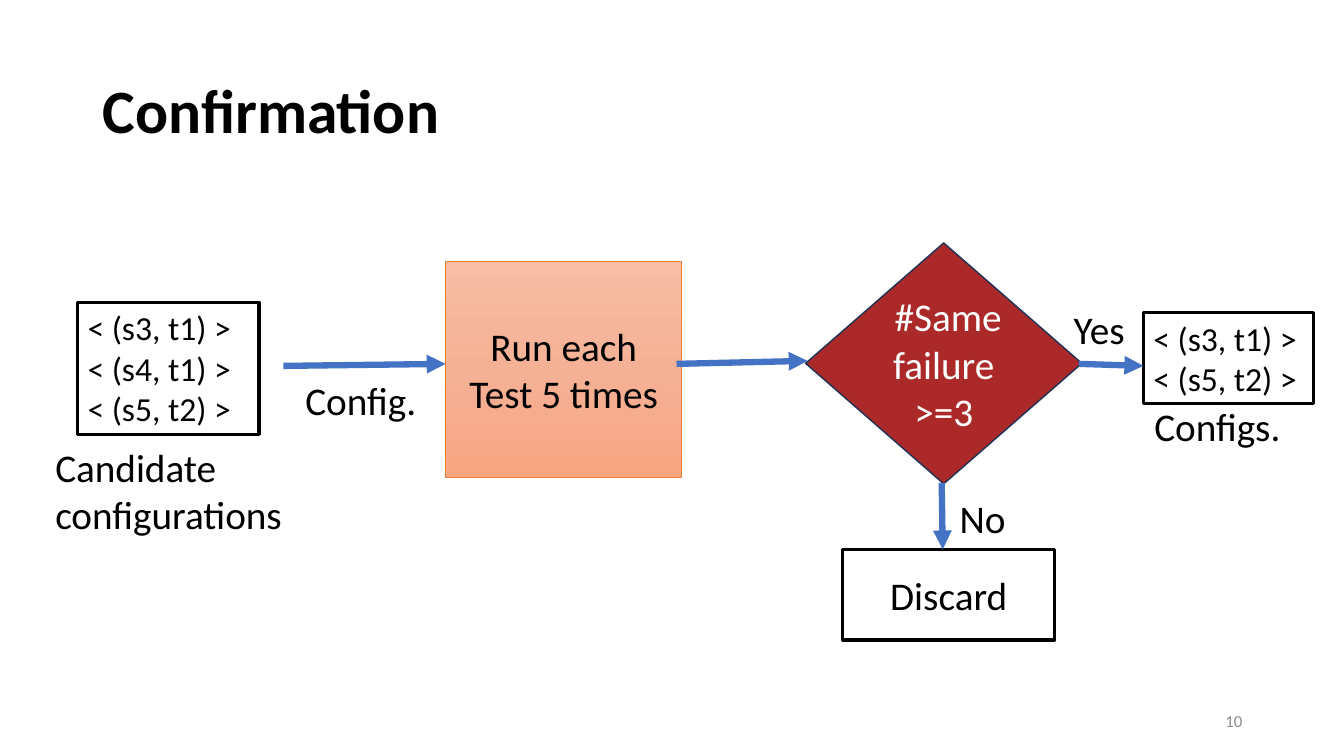
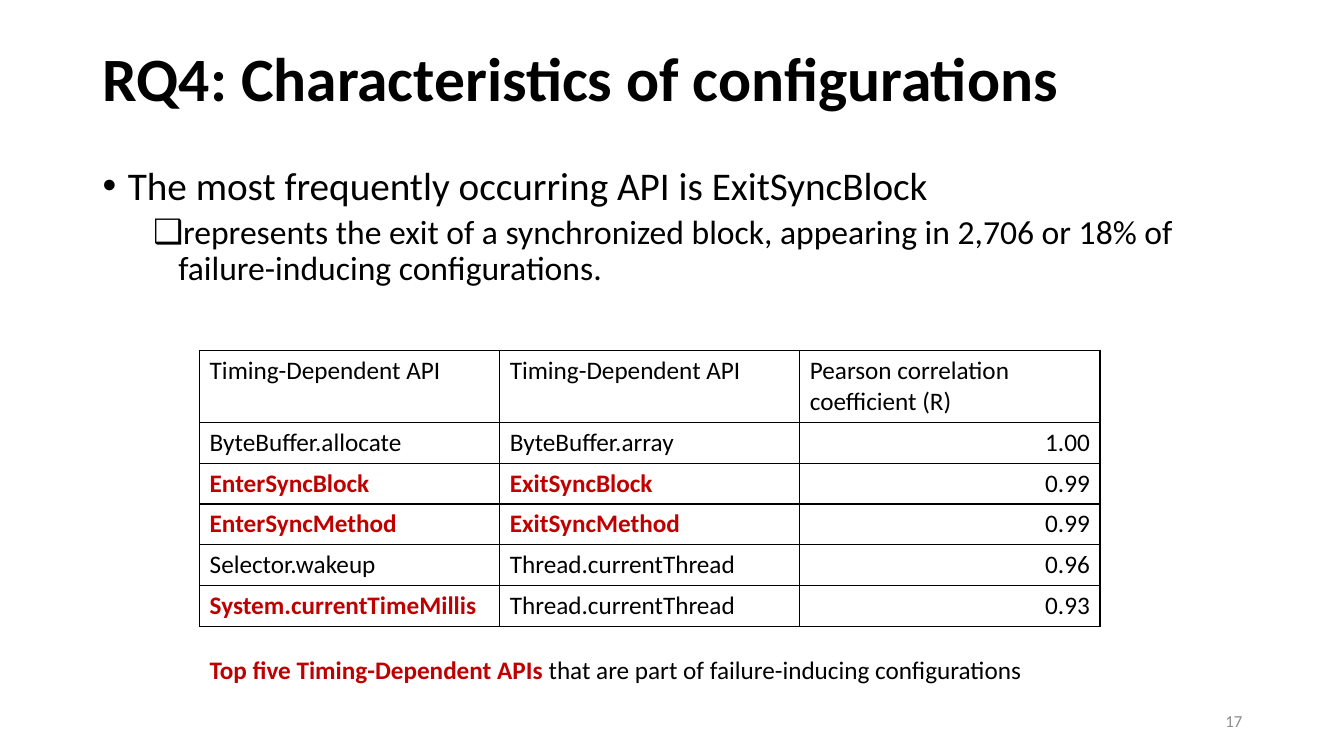
from copy import deepcopy

from lxml import etree
from pptx import Presentation
from pptx.dml.color import RGBColor
from pptx.enum.shapes import MSO_CONNECTOR, MSO_SHAPE
from pptx.enum.text import MSO_ANCHOR, PP_ALIGN
from pptx.oxml.ns import qn
from pptx.util import Inches, Pt

LEFT, CENTER, RIGHT = PP_ALIGN.LEFT, PP_ALIGN.CENTER, PP_ALIGN.RIGHT
TOP, MIDDLE = MSO_ANCHOR.TOP, MSO_ANCHOR.MIDDLE
RECTANGLE, DIAMOND = MSO_SHAPE.RECTANGLE, MSO_SHAPE.DIAMOND
STRAIGHT = MSO_CONNECTOR.STRAIGHT

# Shared style
FONT = "Calibri"
BLACK, WHITE, GREY = "000000", "FFFFFF", "8C8C8C"
RED, BLUE, ORANGE = "C00000", "4472C4", "ED7D31"
DARK_RED, NAVY = "AB2929", "1E3256"
PEACH = [(0, "F7BDA5"), (0.5, "F5B196"), (1, "F8A582")]
MARGIN, CONTENT_WIDTH = 0.92, 11.5

# Confirmation: flow chart content
LABELS = [
    ("Candidate\vconfigurations", (0.45, 4.35, 2.91, 1.04)),
    ("Config.", (2.93, 3.68, 1.59, 0.57)),
    ("Yes", (10.55, 2.98, 0.85, 0.57)),
    ("No", (9.42, 4.85, 0.85, 0.57)),
    ("Configs.", (11.35, 3.94, 1.68, 0.57)),
]
CANDIDATES = ["< (s3, t1) >", "< (s4, t1) >", "< (s5, t2) >"]
CONFIRMED = ["< (s3, t1) >", "< (s5, t2) >"]
ARROWS = [
    ((2.81, 3.63), (4.42, 3.61)),
    ((6.71, 3.61), (8.01, 3.58)),
    ((10.7, 3.61), (11.34, 3.63)),
    ((9.34, 4.79), (9.35, 5.45)),
]

# RQ4: bullets as (text, size, left indent, space before, bullet)
BULLETS = [
    ("The most frequently occurring API is ExitSyncBlock", 28, 0.25, 10, "•"),
    ("represents the exit of a synchronized block, appearing in 2,706 or 18% of "
     "failure-inducing configurations.", 24, 0.75, 5, "❑"),
]
HANGING = 0.25
API_ROWS = [
    ("Timing-Dependent API", "Timing-Dependent API", "Pearson correlation coefficient (R)"),
    ("ByteBuffer.allocate", "ByteBuffer.array", "1.00"),
    ("EnterSyncBlock", "ExitSyncBlock", "0.99"),
    ("EnterSyncMethod", "ExitSyncMethod", "0.99"),
    ("Selector.wakeup", "Thread.currentThread", "0.96"),
    ("System.currentTimeMillis", "Thread.currentThread", "0.93"),
]
TOP_APIS = {"EnterSyncBlock", "ExitSyncBlock", "EnterSyncMethod", "ExitSyncMethod",
            "System.currentTimeMillis"}
CAPTION = [("Top five Timing-Dependent APIs", {"color": RED, "bold": True}),
           (" that are part of failure-inducing configurations", {})]


def rgb(color):
    return RGBColor.from_string(color)


def add_span(para, text, size=28, color=BLACK, bold=False):
    for index, line in enumerate(text.split("\v")):
        if index:
            para.add_line_break()
        span = para.add_run()
        span.text = line
        span.font.name, span.font.size = FONT, Pt(size)
        span.font.bold, span.font.color.rgb = bold, rgb(color)


def write(frame, paragraphs, align=LEFT, spacing=None, **style):
    """Fill a frame; a paragraph is a string or a list of (text, style) spans."""
    for index, content in enumerate(paragraphs):
        para = frame.add_paragraph() if index else frame.paragraphs[0]
        para.alignment = align
        if spacing:
            para.line_spacing = spacing
        spans = [(content, {})] if isinstance(content, str) else content
        for text, own_style in spans:
            add_span(para, text, **{**style, **own_style})


def add_text(page, place, paragraphs, anchor=TOP, **style):
    box = page.shapes.add_textbox(*map(Inches, place))
    frame = box.text_frame
    frame.word_wrap, frame.vertical_anchor = True, anchor
    write(frame, paragraphs, **style)
    return frame


def add_box(page, place, paragraphs, kind=RECTANGLE, fill=WHITE, line=BLACK,
            line_width=2.25, anchor=MIDDLE, align=CENTER, **style):
    box = page.shapes.add_shape(kind, *map(Inches, place))
    box.shadow.inherit = False
    if isinstance(fill, str):
        box.fill.solid()
        box.fill.fore_color.rgb = rgb(fill)
    else:
        fill_gradient(box, fill)
    box.line.color.rgb, box.line.width = rgb(line), Pt(line_width)
    box.text_frame.word_wrap, box.text_frame.vertical_anchor = True, anchor
    write(box.text_frame, paragraphs, align=align, **style)


def fill_gradient(box, colors):
    box.fill.gradient()
    box.fill.gradient_angle = 270
    stop_list = box._element.spPr.find(".//" + qn("a:gsLst"))
    while len(stop_list) < len(colors):
        stop_list.append(deepcopy(stop_list[0]))
    for stop, (position, color) in zip(box.fill.gradient_stops, colors):
        stop.position, stop.color.rgb = position, rgb(color)


def add_arrow(page, start, end):
    arrow = page.shapes.add_connector(STRAIGHT, *map(Inches, start + end))
    arrow.line.color.rgb, arrow.line.width = rgb(BLUE), Pt(4.5)
    properties = arrow._element.spPr
    etree.SubElement(properties.find(qn("a:ln")), qn("a:tailEnd"), type="triangle")
    etree.SubElement(properties, qn("a:effectLst"))


def add_border(cell):
    properties = cell._tc.get_or_add_tcPr()
    for index, side in enumerate(("a:lnL", "a:lnR", "a:lnT", "a:lnB")):
        line = etree.Element(qn(side), w=str(Pt(1)))
        solid = etree.SubElement(line, qn("a:solidFill"))
        etree.SubElement(solid, qn("a:srgbClr"), val=BLACK)
        properties.insert(index, line)


def add_page(deck, title, title_top, number):
    page = deck.slides.add_slide(deck.slide_layouts[6])
    add_text(page, (MARGIN, title_top, CONTENT_WIDTH, 1.45), [title], anchor=MIDDLE,
             size=44, bold=True, spacing=0.9)
    add_text(page, (9.42, 6.95, 3, 0.4), [number], anchor=MIDDLE, align=RIGHT,
             size=12, color=GREY)
    return page


def add_bullets(page):
    frame = add_text(page, (MARGIN, 1.6, CONTENT_WIDTH, 1.5),
                     [[(text, {"size": size})] for text, size, *_ in BULLETS], spacing=0.9)
    for para, (_, _, indent, before, bullet) in zip(frame.paragraphs, BULLETS):
        para.space_before = Pt(before)
        properties = para._p.get_or_add_pPr()
        properties.set("marL", str(Inches(indent)))
        properties.set("indent", str(-Inches(HANGING)))
        etree.SubElement(properties, qn("a:buFont"), typeface="Arial")
        etree.SubElement(properties, qn("a:buChar"), char=bullet)


def add_api_table(page):
    heights = [0.71] + [0.405] * (len(API_ROWS) - 1)
    table = page.shapes.add_table(len(API_ROWS), len(API_ROWS[0]), Inches(1.98),
                                  Inches(3.48), Inches(8.93), Inches(sum(heights))).table
    table.first_row = table.horz_banding = False
    for row, height in zip(table.rows, heights):
        row.height = Inches(height)
    for row_index, values in enumerate(API_ROWS):
        for column, text in enumerate(values):
            cell = table.cell(row_index, column)
            cell.fill.background()
            add_border(cell)
            is_top = text in TOP_APIS
            write(cell.text_frame, [text], size=18, bold=is_top,
                  color=RED if is_top else BLACK,
                  align=RIGHT if row_index and column == 2 else LEFT)


def build_confirmation(deck):
    page = add_page(deck, "Confirmation", 0.4, "10")
    # Process, decision and outcome boxes
    add_box(page, (4.42, 2.59, 2.34, 2.15), ["Run each Test 5 times"],
            fill=PEACH, line=ORANGE, line_width=0.5)
    add_box(page, (7.99, 2.41, 2.74, 2.39), [" #Same failure >=3"], kind=DIAMOND,
            fill=DARK_RED, line=NAVY, line_width=1, color=WHITE)
    add_box(page, (8.36, 5.45, 2.1, 0.9), ["Discard"])
    # Configuration lists
    for place, entries in (((0.77, 3, 1.8, 1.31), CANDIDATES),
                           ((11.34, 3.1, 1.69, 0.9), CONFIRMED)):
        add_box(page, place, entries, anchor=TOP, align=LEFT, size=24)
    # Arrows and their labels
    for start, end in ARROWS:
        add_arrow(page, start, end)
    for text, place in LABELS:
        add_text(page, place, [text])


def build_characteristics(deck):
    page = add_page(deck, "RQ4: Characteristics of configurations", 0.08, "17")
    add_bullets(page)
    add_api_table(page)
    add_text(page, (1.98, 6.44, 8.44, 0.4), [CAPTION], size=18)


def main():
    deck = Presentation()
    deck.slide_width, deck.slide_height = Inches(13.33), Inches(7.5)
    build_confirmation(deck)
    build_characteristics(deck)
    deck.save("out.pptx")


if __name__ == "__main__":
    main()
